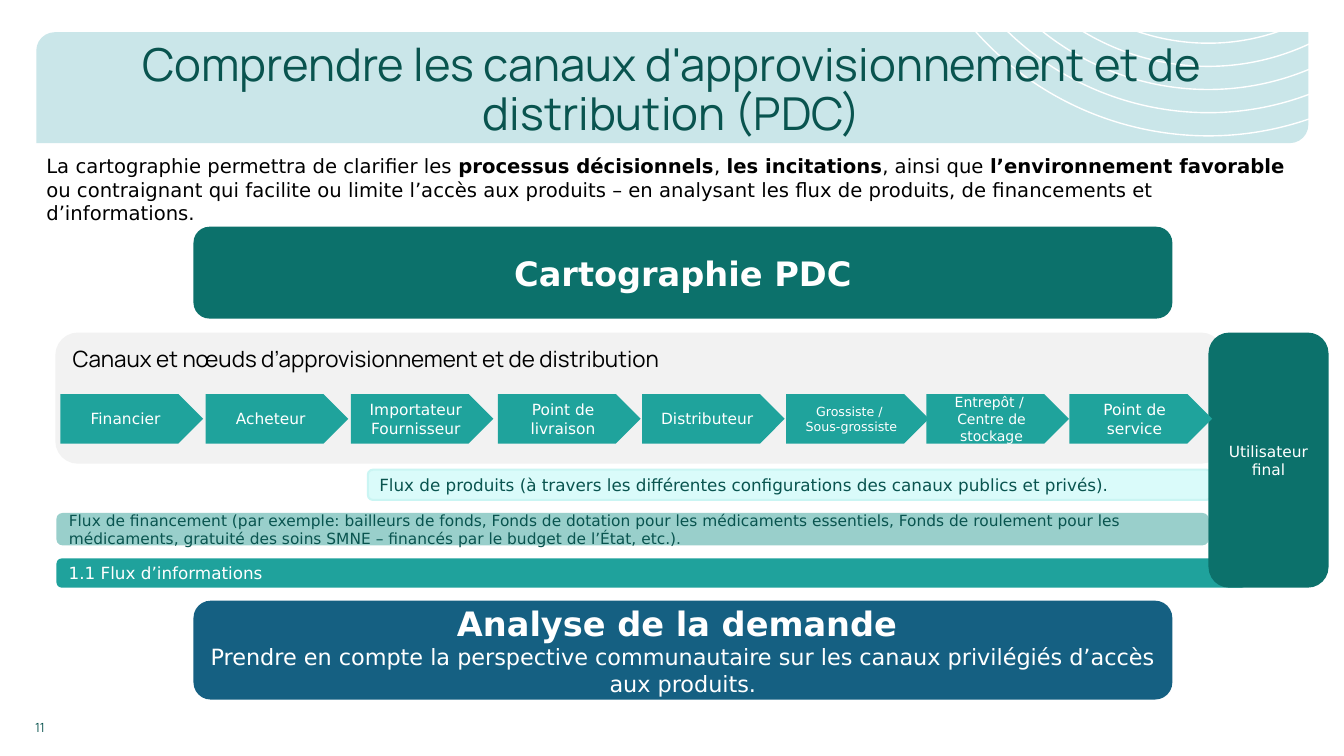
from math import cos, radians, sin

from lxml.etree import SubElement
from pptx import Presentation
from pptx.dml.color import RGBColor
from pptx.enum.shapes import MSO_SHAPE
from pptx.enum.text import MSO_ANCHOR, PP_ALIGN
from pptx.oxml.ns import qn
from pptx.util import Emu, Pt

PX = 9144  # 100 px to the inch
COLORS = {
    "panel": "CAE6E9",
    "deep": "0C716B",
    "ink": "09544F",
    "black": "000000",
    "white": "FFFFFF",
    "grey": "F2F2F2",
    "products": "DAFBFA",
    "products_edge": "CAF5F3",
    "funding": "99CFCB",
    "information": "1FA29C",
    "node": "1FA39C",
    "demand": "156082",
}
BODY_FONT = "DejaVu Sans"
TITLE_FONT = "Manrope"
ARC_ROTATION = -30
QUARTER_CURVE = 0.55  # handle length of a quarter circle, in radii
NODE_TOP, NODE_WIDTH, NODE_HEIGHT = 392, 139, 47
NODES = [
    (61, ["Financier"], 11),
    (205, ["Acheteur"], 11),
    (349, ["Importateur", "Fournisseur"], 11),
    (495, ["Point de livraison"], 11),
    (638, ["Distributeur"], 11),
    (781, ["Grossiste / ", "Sous-grossiste"], 9),
    (920, ["Entrepôt / ", "Centre de stockage"], 10),
    (1062, ["Point de service"], 11),
]


def px(*lengths):
    return [Emu(round(length * PX)) for length in lengths]


def rgb(name):
    return RGBColor.from_string(COLORS[name])


def write(shape, paragraphs, size=11, color="white", font=BODY_FONT, bold=False,
          align=PP_ALIGN.CENTER, anchor=MSO_ANCHOR.MIDDLE, spacing=None, inset=None):
    """Each paragraph is a string or a list of (text, size, bold) runs."""
    frame = shape.text_frame
    frame.word_wrap = True
    frame.vertical_anchor = anchor
    if inset is not None:
        frame.margin_left = frame.margin_right = Emu(inset)
        frame.margin_top = frame.margin_bottom = Emu(inset)
    for index, content in enumerate(paragraphs):
        paragraph = frame.add_paragraph() if index else frame.paragraphs[0]
        paragraph.alignment = align
        if spacing:
            paragraph.line_spacing = spacing
        runs = [(content, size, bold)] if isinstance(content, str) else content
        for text, run_size, run_bold in runs:
            run = paragraph.add_run()
            run.text = text
            run.font.name = font
            run.font.size = Pt(run_size)
            run.font.bold = run_bold
            run.font.color.rgb = rgb(color)


def set_line(shape, color, width):
    """Give the shape a line with sharp corners."""
    shape.line.color.rgb = rgb(color)
    shape.line.width = Pt(width)
    line = shape._element.spPr.find(qn("a:ln"))
    SubElement(line, qn("a:miter"), lim="800000")


def add_box(slide, place, fill, edge=None, kind=MSO_SHAPE.ROUNDED_RECTANGLE):
    shape = slide.shapes.add_shape(kind, *px(*place))
    shape.shadow.inherit = False
    shape.fill.solid()
    shape.fill.fore_color.rgb = rgb(fill)
    set_line(shape, edge or fill, 1.5)
    return shape


def add_text(slide, place, paragraphs, **text_format):
    write(slide.shapes.add_textbox(*px(*place)), paragraphs, **text_format)


def add_arc(slide, center_x, center_y, radius):
    """Draw a turned half circle as two Bézier quarters."""
    turn = radians(ARC_ROTATION)
    left = center_x - radius - radius / 2 * sin(turn)
    top = center_y - radius / 2 + radius / 2 * cos(turn)
    builder = slide.shapes.build_freeform(*px(left, top))
    builder.add_line_segments(
        [px(left + radius, top + radius), px(left + 2 * radius, top)], close=False)
    arc = builder.convert_to_shape()

    handle = QUARTER_CURVE * radius
    quarters = [
        [(0, handle), (radius - handle, radius), (radius, radius)],
        [(radius + handle, radius), (2 * radius, handle), (2 * radius, 0)],
    ]
    outline = next(arc._element.iter(qn("a:path")))
    for segment in outline.findall(qn("a:lnTo")):
        outline.remove(segment)
    for quarter in quarters:
        curve = SubElement(outline, qn("a:cubicBezTo"))
        for point in quarter:
            x, y = px(*point)
            SubElement(curve, qn("a:pt"), x=str(x), y=str(y))

    arc.rotation = ARC_ROTATION
    arc.shadow.inherit = False
    arc.fill.background()
    set_line(arc, "white", 1)


def add_header(slide):
    panel = add_box(slide, (36, 32, 1262, 110), "panel",
                    kind=MSO_SHAPE.ROUND_2_DIAG_RECTANGLE)
    panel.line.fill.background()
    for index in range(5):
        add_arc(slide, 1198, -172, 307 - 23 * index)


def add_title_and_intro(slide):
    add_text(slide, (64, 42, 1205, 98),
             ["Comprendre les canaux d'approvisionnement et de distribution (PDC)"],
             size=32.4, color="ink", font=TITLE_FONT, spacing=0.9)
    add_text(slide, (46, 153, 1247, 71), [[
        ("La cartographie permettra de clarifier les ", 14, False),
        ("processus décisionnels", 14, True),
        (", ", 14, False),
        ("les incitations", 14, True),
        (", ainsi que ", 14, False),
        ("l’environnement favorable ", 14, True),
        ("ou contraignant qui facilite ou limite l’accès aux produits – en analysant "
         "les flux de produits, de financements et d’informations.", 14, False),
    ]], color="black", align=PP_ALIGN.LEFT, anchor=MSO_ANCHOR.TOP, inset=0)


def add_flows(slide):
    products = add_box(slide, (365, 466, 837, 30), "products", "products_edge")
    write(products,
          ["Flux de produits (à travers les différentes configurations des canaux "
           "publics et privés)."],
          size=12, color="ink", align=PP_ALIGN.LEFT)
    channels = add_box(slide, (56, 331, 1157, 128), "grey")
    write(channels, ["Canaux et nœuds d’approvisionnement et de distribution"],
          size=16, color="black", font=TITLE_FONT, align=PP_ALIGN.LEFT,
          anchor=MSO_ANCHOR.TOP)
    funding = add_box(slide, (57, 510, 1141, 30), "funding")
    write(funding,
          ["Flux de financement (par exemple: bailleurs de fonds, Fonds de dotation "
           "pour les médicaments essentiels, Fonds de roulement pour les médicaments, "
           "gratuité des soins SMNE – financés par le budget de l’État, etc.)."],
          color="ink", align=PP_ALIGN.LEFT)
    information = add_box(slide, (57, 555, 1179, 27), "information")
    write(information, ["1.1 Flux d’informations"], size=12, align=PP_ALIGN.LEFT)
    write(add_box(slide, (1200, 331, 117, 251), "deep"), ["Utilisateur final"])


def add_nodes(slide):
    for left, label, size in NODES:
        node = add_box(slide, (left, NODE_TOP, NODE_WIDTH, NODE_HEIGHT), "node",
                       kind=MSO_SHAPE.PENTAGON)
        write(node, label, size=size)


def main():
    presentation = Presentation()
    presentation.slide_width, presentation.slide_height = px(1333.33, 750)
    slide = presentation.slides.add_slide(presentation.slide_layouts[6])
    add_header(slide)
    mapping = add_box(slide, (193, 226, 969, 89), "deep")
    write(mapping, ["Cartographie PDC"], size=24, bold=True)
    add_title_and_intro(slide)
    add_flows(slide)
    add_nodes(slide)
    demand = add_box(slide, (193, 597, 969, 96), "demand")
    write(demand, [
        [("Analyse de la demande ", 24, True)],
        [("Prendre en compte la perspective communautaire sur les canaux privilégiés "
          "d’accès aux produits.", 16, False)],
    ])
    add_text(slide, (25, 694, 50, 40), ["11"], size=9, color="ink", font=TITLE_FONT,
             align=PP_ALIGN.LEFT, anchor=MSO_ANCHOR.BOTTOM)
    presentation.save("out.pptx")


if __name__ == "__main__":
    main()
